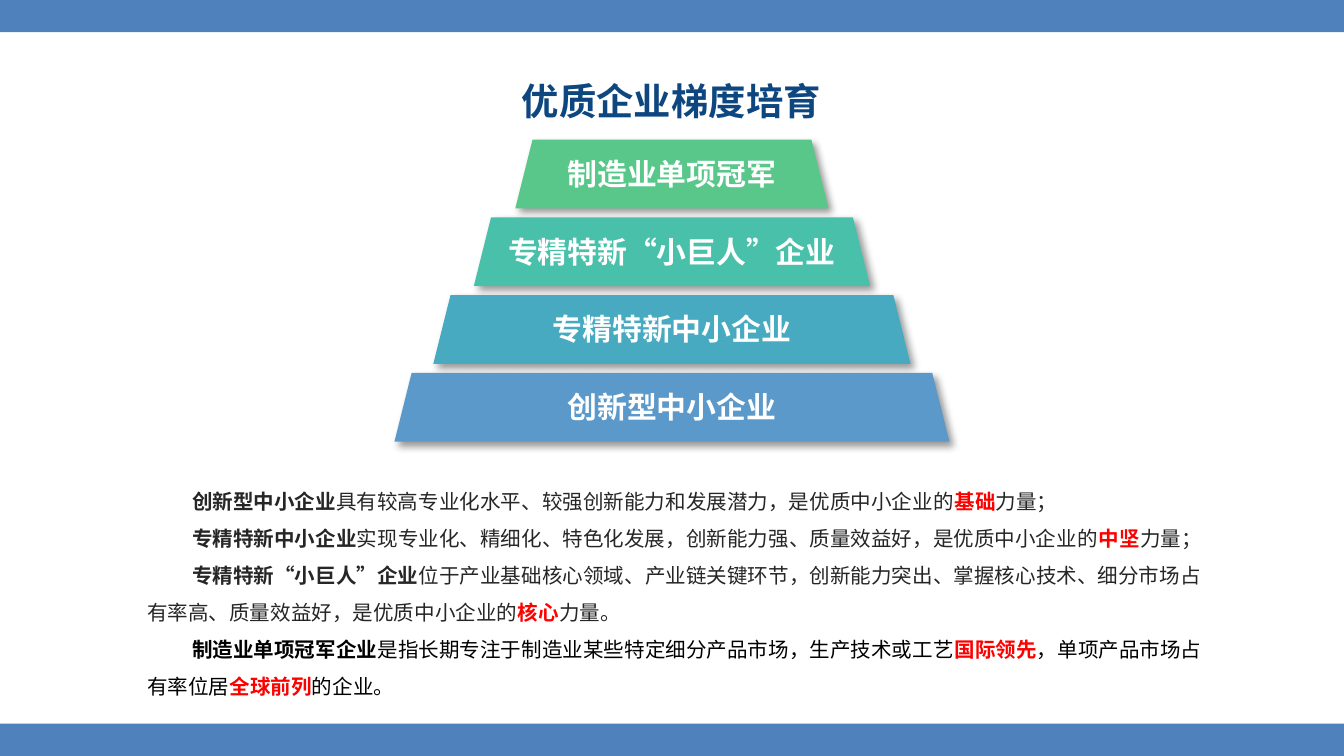
from lxml.etree import SubElement
from pptx import Presentation
from pptx.dml.color import RGBColor
from pptx.enum.lang import MSO_LANGUAGE_ID
from pptx.enum.shapes import MSO_SHAPE
from pptx.enum.text import MSO_ANCHOR, MSO_AUTO_SIZE, PP_ALIGN
from pptx.oxml.ns import qn
from pptx.util import Cm, Pt

FONT = "Noto Sans CJK SC"
BLUE, NAVY, WHITE = "4F81BD", "0E477F", "FFFFFF"
GREY, BLACK, RED = "262626", "000000", "FF0000"
WIDTH, HEIGHT, BAR_HEIGHT = 25.4, 14.29, 0.61
TIER_TOP, TIER_STEP, TIER_HEIGHT = 2.64, 1.47, 1.3

TIERS = [
    ("制造业单项冠军", "59C78A", 5.92, 5.94),
    ("专精特新“小巨人”企业", "49C1AA", 7.49, 7.11),
    ("专精特新中小企业", "48AAC1", 9.02, 5.31),
    ("创新型中小企业", "5B99CA", 10.49, 5.66),
]

DEFINITIONS = [
    (GREY, ["创新型中小企业", "具有较高专业化水平、较强创新能力和发展潜力，是优质中小企业的",
            "基础", "力量；"]),
    (GREY, ["专精特新中小企业",
            "实现专业化、精细化、特色化发展，创新能力强、质量效益好，是优质中小企业的",
            "中坚", "力量；"]),
    (GREY, ["专精特新“小巨人”企业",
            "位于产业基础核心领域、产业链关键环节，创新能力突出、掌握核心技术、"
            "细分市场占有率高、质量效益好，是优质中小企业的",
            "核心", "力量。"]),
    (BLACK, ["制造业单项冠军企业",
             "是指长期专注于制造业某些特定细分产品市场，生产技术或工艺",
             "国际领先", "，单项产品市场占有率位居", "全球前列", "的企业。"]),
]


def color(value):
    """Turn a hex string into a colour."""
    return RGBColor.from_string(value)


def set_values(target, values):
    """Set each named attribute of the target."""
    for name, value in values.items():
        setattr(target, name, value)


def add_span(para, text, size, fill, bold=True):
    """Add one formatted run to a paragraph."""
    span = para.add_run()
    span.text = text
    set_values(span.font, {"name": FONT, "size": Pt(size), "bold": bold,
                           "language_id": MSO_LANGUAGE_ID.SIMPLIFIED_CHINESE})
    span.font.color.rgb = color(fill)
    SubElement(span.font._element, qn("a:ea"), typeface=FONT)


def format_frame(frame, anchor=MSO_ANCHOR.TOP):
    """Give a text frame its margins, wrapping and anchor."""
    set_values(frame, {"word_wrap": True, "auto_size": MSO_AUTO_SIZE.NONE,
                       "vertical_anchor": anchor,
                       "margin_left": Cm(0.18), "margin_right": Cm(0.18),
                       "margin_top": Cm(0.1), "margin_bottom": Cm(0.1)})


def add_box(page, left, top, width, height):
    """Add an empty text box and return its text frame."""
    box = page.shapes.add_textbox(Cm(left), Cm(top), Cm(width), Cm(height))
    format_frame(box.text_frame)
    return box.text_frame


def add_filled(page, kind, left, top, width, height, fill):
    """Add a preset shape with a plain fill and no line."""
    shape = page.shapes.add_shape(kind, Cm(left), Cm(top), Cm(width), Cm(height))
    shape.shadow.inherit = False
    shape.fill.solid()
    shape.fill.fore_color.rgb = color(fill)
    shape.line.fill.background()
    return shape


def add_shadow(shape):
    """Give a shape a soft shadow to the lower right."""
    effects = shape._element.spPr.find(qn("a:effectLst"))
    shadow = SubElement(effects, qn("a:outerShdw"), blurRad=str(Pt(4)),
                        dist=str(Pt(3)), dir="2700000", algn="tl", rotWithShape="0")
    tint = SubElement(shadow, qn("a:srgbClr"), val=BLACK)
    SubElement(tint, qn("a:alpha"), val="40000")


def add_title(page, text):
    """Place and format the slide title."""
    title = page.shapes.title
    set_values(title, {"left": Cm(4.6), "top": Cm(1.3),
                       "width": Cm(16.18), "height": Cm(1.22)})
    format_frame(title.text_frame, MSO_ANCHOR.MIDDLE)
    para = title.text_frame.paragraphs[0]
    para.alignment = PP_ALIGN.CENTER
    add_span(para, text, 20, NAVY)


def add_tier(page, index, text, fill, width, label_width):
    """Add one level of the pyramid with its label."""
    top = TIER_TOP + index * TIER_STEP
    tier = add_filled(page, MSO_SHAPE.TRAPEZOID, (WIDTH - width) / 2, top,
                      width, TIER_HEIGHT, fill)
    add_shadow(tier)
    frame = add_box(page, (WIDTH - label_width) / 2, top + 0.2, label_width, 1.14)
    para = frame.paragraphs[0]
    para.alignment = PP_ALIGN.CENTER
    add_span(para, text, 16, WHITE)


def add_definitions(page):
    """Add the indented definitions with their key words in red."""
    frame = add_box(page, 2.6, 8.92, 20.62, 4.29)
    for index, (fill, parts) in enumerate(DEFINITIONS):
        para = frame.add_paragraph() if index else frame.paragraphs[0]
        para.line_spacing = 1.5
        para._p.get_or_add_pPr().set("indent", str(Cm(0.85)))
        for place, text in enumerate(parts):
            key_word = place > 0 and place % 2 == 0
            add_span(para, text, 11, RED if key_word else fill, place % 2 == 0)


def main():
    """Build the slide and save it."""
    deck = Presentation()
    set_values(deck, {"slide_width": Cm(WIDTH), "slide_height": Cm(HEIGHT)})
    page = deck.slides.add_slide(deck.slide_layouts[5])
    for top in (0, HEIGHT - BAR_HEIGHT):
        add_filled(page, MSO_SHAPE.RECTANGLE, 0, top, WIDTH, BAR_HEIGHT, BLUE)
    add_title(page, "优质企业梯度培育")
    add_definitions(page)
    for index, tier in enumerate(TIERS):
        add_tier(page, index, *tier)
    deck.save("out.pptx")


if __name__ == "__main__":
    main()
